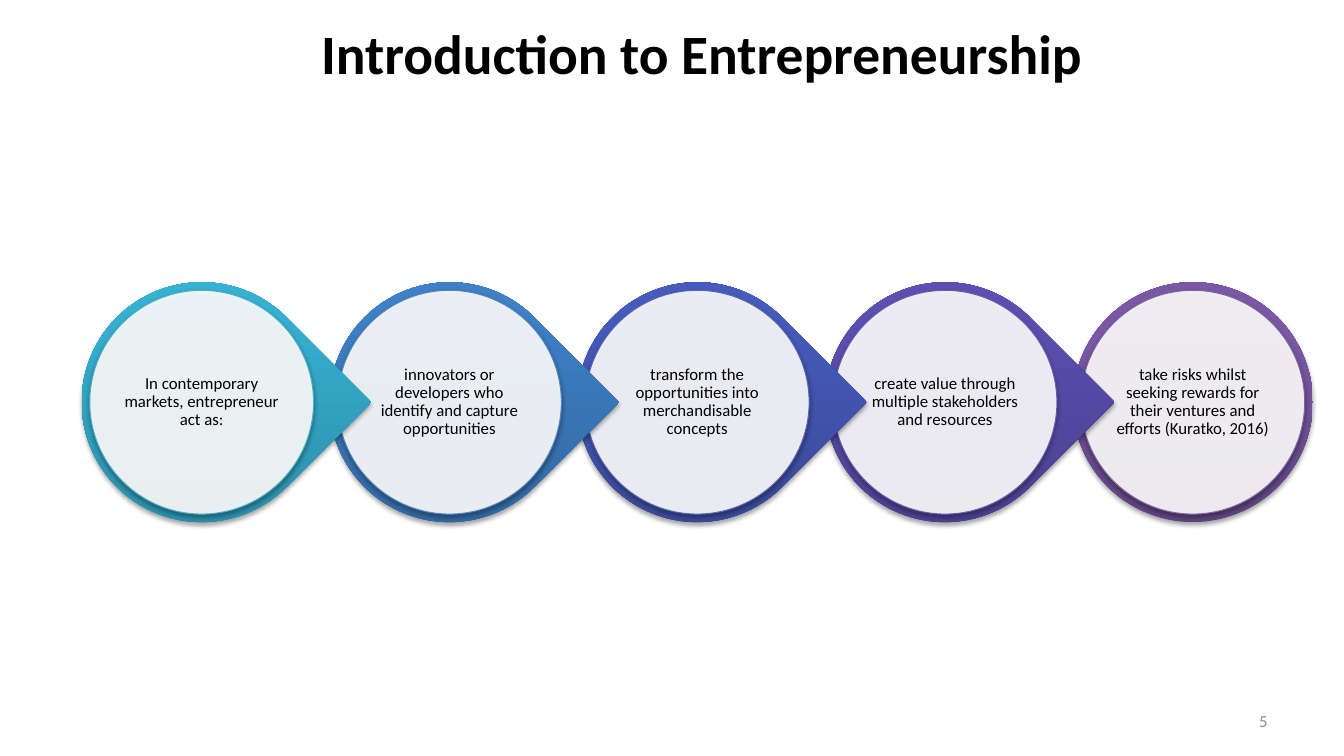
import dataclasses

import pptx
import pptx.util
import pptx.dml.color
import pptx.enum.shapes
import pptx.enum.text
import pptx.oxml
import pptx.oxml.ns

Inches = pptx.util.Inches
Pt = pptx.util.Pt
Kind = pptx.enum.shapes.MSO_SHAPE
Align = pptx.enum.text.PP_ALIGN
NS = pptx.oxml.ns.nsdecls("a")
tag = pptx.oxml.ns.qn


@dataclasses.dataclass
class Theme:
    """Fonts, sizes and colours of the slide."""
    font: str = "Calibri"
    head: float = 39.6
    body: float = 12
    ink: str = "000000"
    grey: str = "8C8C8C"
    disc: str = "FFFFFF"
    edge: float = 0.75


class Deck:
    """Draws each kind of element on the current slide."""

    def __init__(self, theme, slide):
        self.theme = theme
        self.slide = slide

    def shape(self, kind, box):
        """Add a preset shape with a soft shadow below it."""
        item = self.slide.shapes.add_shape(kind, *map(Inches, box))
        item.shadow.inherit = False
        glow = item._element.spPr.find(tag("a:effectLst"))
        glow.append(pptx.oxml.parse_xml(
            f'<a:outerShdw {NS} blurRad="40000" dist="23000" dir="5400000" '
            'rotWithShape="0"><a:srgbClr val="000000"><a:alpha val="35000"/>'
            '</a:srgbClr></a:outerShdw>'))
        return item

    def ring(self, box, stops, drop):
        """Add the graded back, a teardrop or a plain circle."""
        item = self.shape(Kind.TEAR if drop else Kind.OVAL, box)
        if drop:
            item.rotation = 45
        item.line.fill.background()
        item.fill.gradient()
        grad = item._element.spPr.find(tag("a:gradFill"))
        marks = "".join(
            f'<a:gs pos="{pos}000"><a:srgbClr val="{tone}"/></a:gs>'
            for pos, tone in zip((0, 80, 100), stops))
        grad.getparent().replace(grad, pptx.oxml.parse_xml(
            f'<a:gradFill {NS} rotWithShape="0"><a:gsLst>{marks}</a:gsLst>'
            '<a:lin ang="16200000" scaled="0"/></a:gradFill>'))

    def disc(self, box, edge):
        """Add the pale, slightly clear disc on a ring."""
        item = self.shape(Kind.OVAL, box)
        item.fill.solid()
        item.fill.fore_color.rgb = self.tone(self.theme.disc)
        tint = item._element.spPr.find(tag("a:solidFill"))[0]
        tint.append(pptx.oxml.parse_xml(f'<a:alpha {NS} val="90000"/>'))
        item.line.color.rgb = self.tone(edge)
        item.line.width = Pt(self.theme.edge)

    def text(self, box, words, size, ink, align=Align.CENTER, bold=False,
             inset=None, lead=None):
        """Add a wrapped text box, centred from top to bottom."""
        frame = self.slide.shapes.add_textbox(*map(Inches, box)).text_frame
        frame.word_wrap = True
        frame.vertical_anchor = pptx.enum.text.MSO_ANCHOR.MIDDLE
        if inset is not None:
            frame.margin_left = frame.margin_right = Inches(inset)
            frame.margin_top = frame.margin_bottom = Inches(inset)
        para = frame.paragraphs[0]
        para.alignment = align
        para.line_spacing = lead
        run = para.add_run()
        run.text = words
        run.font.name = self.theme.font
        run.font.size = Pt(size)
        run.font.bold = bold
        run.font.color.rgb = self.tone(ink)

    def tone(self, code):
        """Turn a hex code into a colour."""
        return pptx.dml.color.RGBColor.from_string(code)


STEPS = [
    ("In contemporary markets, entrepreneur act as:",
     ("2A88A2", "37B1D2", "34B4D6"), "4BACC6"),
    ("innovators or developers who identify and capture opportunities",
     ("306399", "3F80C7", "3C80CB"), "5185BD"),
    ("transform the opportunities into merchandisable concepts",
     ("374691", "475BBC", "455ABF"), "5767B4"),
    ("create value through multiple stakeholders and resources",
     ("483D89", "5D4FB1", "5C4EB4"), "685DAB"),
    ("take risks whilst seeking rewards for their ventures and efforts "
     "(Kuratko, 2016)",
     ("5F4480", "7B58A6", "7C57A8"), "8064A2"),
]
LEFT, RIGHT, MID = 0.81, 10.64, 3.99
RING, DISC, LABEL = 2.38, 2.22, 1.59


def main():
    """Build the slide and save it."""
    show = pptx.Presentation()
    show.slide_width, show.slide_height = Inches(13.33), Inches(7.5)
    theme = Theme()
    deck = Deck(theme, show.slides.add_slide(show.slide_layouts[6]))
    deck.text((2, 0.11, 9.92, 0.81), "Introduction to Entrepreneurship",
              theme.head, theme.ink, bold=True)

    last = len(STEPS) - 1
    pitch = (RIGHT - LEFT) / last
    for spot, (words, stops, edge) in reversed(list(enumerate(STEPS))):
        core = LEFT + RING / 2 + spot * pitch
        ring, disc, label = (
            (core - side / 2, MID - side / 2, side, side)
            for side in (RING, DISC, LABEL))
        deck.ring(ring, stops, spot < last)
        deck.disc(disc, edge)
        deck.text(label, words, theme.body, theme.ink, inset=0.02, lead=0.9)

    deck.text((9.56, 6.95, 3.11, 0.4), "5", theme.body, theme.grey,
              Align.RIGHT)
    show.save("out.pptx")


if __name__ == "__main__":
    main()
